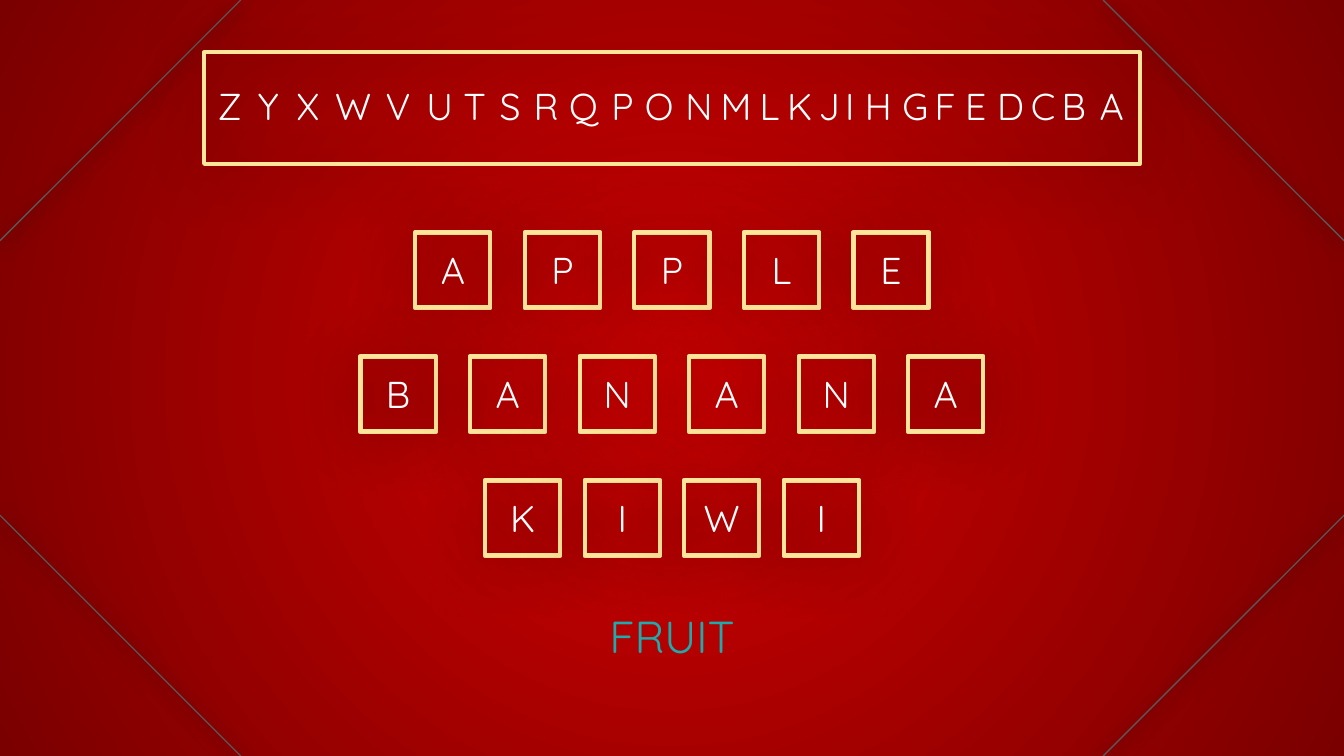
from dataclasses import dataclass

from lxml import etree
from pptx import Presentation
from pptx import util as u
from pptx.dml.color import RGBColor
from pptx.enum import shapes, text
from pptx.oxml import parse_xml
from pptx.oxml.ns import nsdecls, qn


@dataclass(frozen=True)
class Theme:
    font: str = "Quicksand"
    letter_size: int = 20
    answer_size: int = 24
    letter: str = "FFFFFF"
    answer: str = "1FAAAD"
    frame: str = "FFE599"
    corner: str = "585858"
    glow: str = "D20000"
    edge: str = "7A0000"
    frame_width: float = 2.25
    corner_width: float = 0.75
    # Shadows: opacity in percent, blur and distance in points
    frame_shadow: tuple = (50, 32, 1.5)
    corner_shadow: tuple = (94, 10, 2.2)


def apply(target, values):
    for name, value in values.items():
        setattr(target, name, value)


class PuzzleSlide:
    def __init__(self, slide, theme):
        self.slide = slide
        self.theme = theme

    def background(self):
        """Radial gradient from a bright centre to dark edges."""
        fill = self.slide.background.fill
        fill.gradient()
        for stop, color in zip(fill.gradient_stops, (self.theme.glow, self.theme.edge)):
            stop.color.rgb = RGBColor.from_string(color)
        gradient = self.slide._element.find(".//" + qn("a:gradFill"))
        gradient.remove(gradient.find(qn("a:lin")))
        radial = etree.SubElement(gradient, qn("a:path"), path="circle")
        etree.SubElement(radial, qn("a:fillToRect"), l="50000", t="50000", r="50000", b="50000")

    def outline(self, shape, color, width, shadow):
        shape.line.color.rgb = RGBColor.from_string(color)
        shape.line.width = u.Pt(width)
        opacity, blur, distance = shadow
        shape._element.spPr.append(parse_xml(
            f'<a:effectLst {nsdecls("a")}><a:outerShdw blurRad="{u.Pt(blur)}" '
            f'dist="{u.Pt(distance)}" dir="5400000" algn="bl" rotWithShape="0">'
            f'<a:srgbClr val="000000"><a:alpha val="{opacity * 1000}"/></a:srgbClr>'
            '</a:outerShdw></a:effectLst>'))

    def set_text(self, shape, words, size, color, inset=0, wrap=True,
                 anchor=text.MSO_ANCHOR.MIDDLE):
        frame = shape.text_frame
        margins = dict.fromkeys(
            ("margin_left", "margin_top", "margin_right", "margin_bottom"), u.Cm(inset))
        apply(frame, {**margins, "word_wrap": wrap, "vertical_anchor": anchor})
        paragraph = frame.paragraphs[0]
        paragraph.alignment = text.PP_ALIGN.CENTER
        run = paragraph.add_run()
        run.text = words
        apply(run.font, {"name": self.theme.font, "size": u.Pt(size)})
        run.font.color.rgb = RGBColor.from_string(color)

    def corner_line(self, start, end):
        line = self.slide.shapes.add_connector(
            shapes.MSO_CONNECTOR.STRAIGHT, *map(u.Cm, (*start, *end)))
        theme = self.theme
        self.outline(line, theme.corner, theme.corner_width, theme.corner_shadow)

    def box(self, left, top, width, height, letter=None):
        shape = self.slide.shapes.add_shape(
            shapes.MSO_SHAPE.RECTANGLE, *map(u.Cm, (left, top, width, height)))
        shape.fill.background()
        theme = self.theme
        self.outline(shape, theme.frame, theme.frame_width, theme.frame_shadow)
        if letter:
            self.set_text(shape, letter, theme.letter_size, theme.letter)

    def label(self, words, left, top, width, height, size, color, **options):
        shape = self.slide.shapes.add_textbox(*map(u.Cm, (left, top, width, height)))
        self.set_text(shape, words, size, color, **options)


WIDTH, HEIGHT = 25.4, 14.29
CORNER = 4.55
PANEL_LEFT, PANEL_WIDTH = 3.86, 17.68
TILE, FIRST_ROW, ROW_PITCH = 1.42, 4.39, 2.34
SLOT_DROP = 0.02  # the empty slot sits just below its letter tile

# Left edge and width of each letter in the bank
LETTER_BANK = {
    "Z": (4.11, 0.46), "Y": (4.83, 0.48), "X": (5.59, 0.46), "W": (6.27, 0.81),
    "V": (7.26, 0.53), "U": (8.03, 0.56), "T": (8.74, 0.46), "S": (9.4, 0.48),
    "R": (10.06, 0.53), "Q": (10.74, 0.58), "P": (11.51, 0.51), "O": (12.17, 0.58),
    "N": (12.93, 0.56), "M": (13.59, 0.64), "L": (14.33, 0.43), "K": (14.86, 0.51),
    "J": (15.47, 0.36), "I": (15.88, 0.36), "H": (16.31, 0.58), "G": (17.02, 0.56),
    "F": (17.65, 0.43), "E": (18.21, 0.46), "D": (18.82, 0.56), "C": (19.46, 0.51),
    "B": (20.04, 0.51), "A": (20.73, 0.56),
}
# Each word with the distance between its tiles
WORDS = (("APPLE", 2.07), ("BANANA", 2.07), ("KIWI", 1.88))


def main():
    presentation = Presentation()
    apply(presentation, {"slide_width": u.Cm(WIDTH), "slide_height": u.Cm(HEIGHT)})
    theme = Theme()
    puzzle = PuzzleSlide(
        presentation.slides.add_slide(presentation.slide_layouts[6]), theme)
    puzzle.background()

    for side, inner_x in ((0, CORNER), (WIDTH, WIDTH - CORNER)):
        for edge, inner_y in ((0, CORNER), (HEIGHT, HEIGHT - CORNER)):
            puzzle.corner_line((side, inner_y), (inner_x, edge))

    puzzle.box(PANEL_LEFT, 0.99, PANEL_WIDTH, 2.11)
    puzzle.label("FRUIT", PANEL_LEFT, 11.2, PANEL_WIDTH, 1.63,
                 theme.answer_size, theme.answer, inset=0.25)
    for letter, (left, width) in LETTER_BANK.items():
        puzzle.label(letter, left, 1.57, width, 0.97, theme.letter_size, theme.letter,
                     wrap=False, anchor=text.MSO_ANCHOR.TOP)

    for row, (word, pitch) in enumerate(WORDS):
        top = FIRST_ROW + row * ROW_PITCH
        start = (WIDTH - TILE - (len(word) - 1) * pitch) / 2
        for column, letter in enumerate(word):
            left = start + column * pitch
            puzzle.box(left, top + SLOT_DROP, TILE, TILE)
            puzzle.box(left, top, TILE, TILE, letter)

    presentation.save("out.pptx")


if __name__ == "__main__":
    main()
